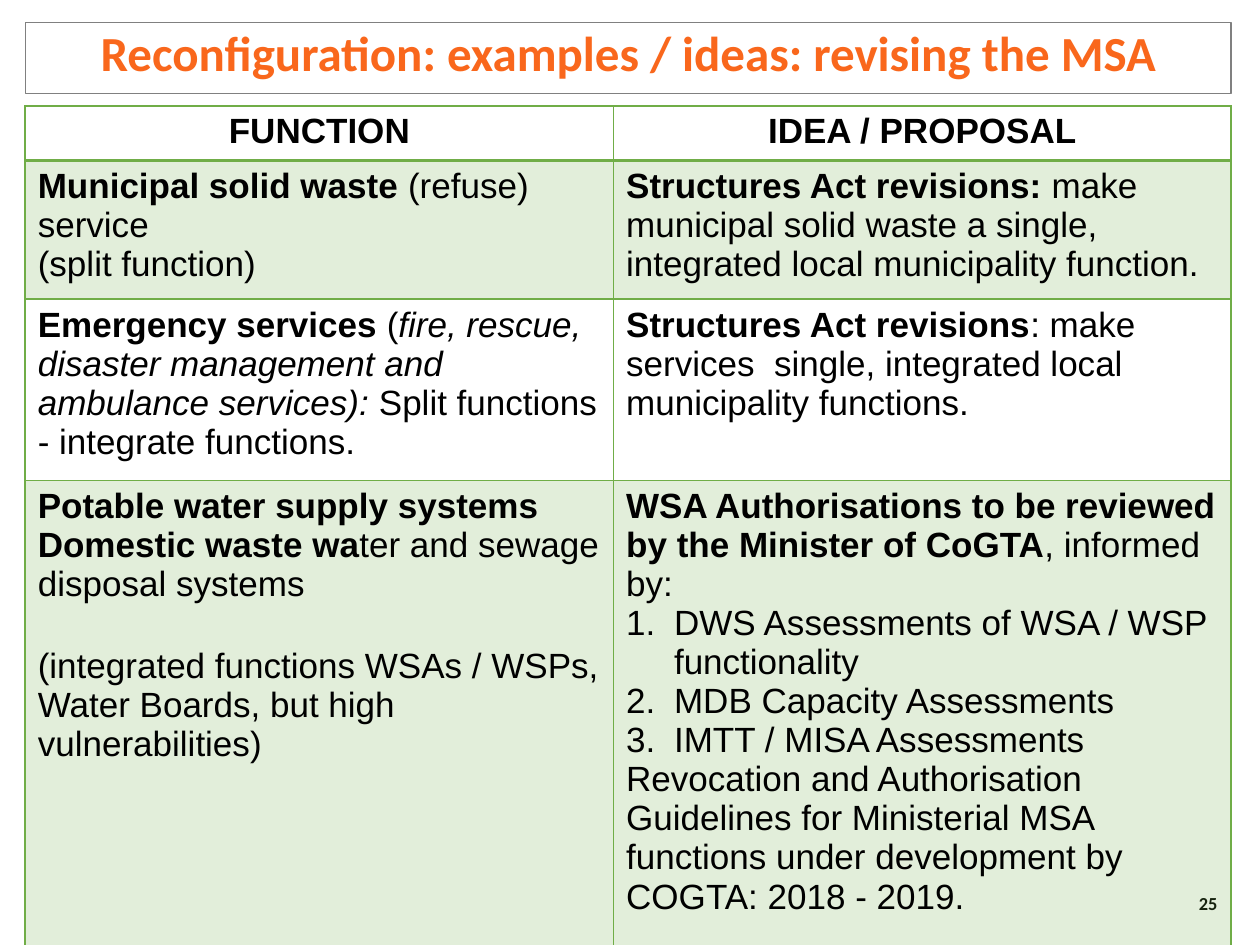
import dataclasses

import pptx
import pptx.dml.color
import pptx.enum.text
import pptx.oxml
import pptx.oxml.ns
import pptx.util

Inches = pptx.util.Inches
Pt = pptx.util.Pt
Align = pptx.enum.text.PP_ALIGN
Anchor = pptx.enum.text.MSO_ANCHOR


@dataclasses.dataclass(frozen=True)
class Theme:
    title_font: str = "Calibri"
    body_font: str = "Arial"
    title_size: float = 28
    body_size: float = 20
    number_size: float = 10.5
    accent: str = "F9671C"
    green: str = "70AD47"
    grey: str = "808080"
    ink: str = "000000"
    band_opacity: int = 20
    border: float = 1
    header_border: float = 2


THEME = Theme()
LEFT, WIDTH = 0.2, 9.57
TABLE_TOP = 0.84
COLUMNS = (4.67, 4.9)
ROWS = (0.43, 1.1, 1.44, 3.75)
NUMBER_INDENT = 0.38
BLOCK_GAP = 24.5


@dataclasses.dataclass(frozen=True)
class Para:
    """Spans are (text, style) pairs; style holds any of "b" and "i"."""
    spans: tuple
    numbered: bool = False
    space_before: float = 0
    align: Align = Align.LEFT


def heading(text):
    return [Para(((text, "b"),), align=Align.CENTER)]


def plain(text, **options):
    return Para(((text, ""),), **options)


TABLE = (
    (heading("FUNCTION"), heading("IDEA / PROPOSAL")),
    (
        [
            Para((("Municipal solid waste ", "b"), ("(refuse) service", ""))),
            plain("(split function)"),
        ],
        [Para((
            ("Structures Act revisions: ", "b"),
            ("make municipal solid waste a single, integrated local "
             "municipality function.", ""),
        ))],
    ),
    (
        [Para((
            ("Emergency services ", "b"),
            ("(", ""),
            ("fire, rescue, disaster management and ambulance services): ", "i"),
            ("Split functions - integrate functions.", ""),
        ))],
        [Para((
            ("Structures Act revisions", "b"),
            (": make services  single, integrated local municipality functions.", ""),
        ))],
    ),
    (
        [
            Para((("Potable water supply systems", "b"),)),
            Para((("Domestic waste wa", "b"), ("ter and sewage disposal systems", ""))),
            plain("(integrated functions WSAs / WSPs, Water Boards, but high "
                  "vulnerabilities)", space_before=BLOCK_GAP),
        ],
        [
            Para((
                ("WSA Authorisations to be reviewed by the Minister of CoGTA", "b"),
                (", informed by:", ""),
            )),
            plain("DWS Assessments of WSA / WSP functionality", numbered=True),
            plain("MDB Capacity Assessments", numbered=True),
            plain("IMTT / MISA Assessments", numbered=True),
            plain("Revocation and Authorisation Guidelines for Ministerial MSA "
                  "functions under development by COGTA: 2018 - 2019."),
        ],
    ),
)


def rgb(color):
    return pptx.dml.color.RGBColor.from_string(color)


def style_font(font, name, size, color, bold=False, italic=False):
    font.name, font.size = name, Pt(size)
    font.bold, font.italic = bold, italic
    font.color.rgb = rgb(color)


def number_paragraph(para):
    properties = para._p.get_or_add_pPr()
    properties.set("marL", str(Inches(NUMBER_INDENT)))
    properties.set("indent", str(-Inches(NUMBER_INDENT)))
    bullet = pptx.oxml.parse_xml(
        f'<a:buAutoNum {pptx.oxml.ns.nsdecls("a")} type="arabicPeriod"/>')
    properties.append(bullet)


def fill_cell_text(cell, paras):
    frame = cell.text_frame
    for index, content in enumerate(paras):
        para = frame.add_paragraph() if index else frame.paragraphs[0]
        para.alignment = content.align
        if content.space_before:
            para.space_before = Pt(content.space_before)
        if content.numbered:
            number_paragraph(para)
        for text, style in content.spans:
            span = para.add_run()
            span.text = text
            style_font(span.font, THEME.body_font, THEME.body_size, THEME.ink,
                       bold="b" in style, italic="i" in style)


def tint_cell(cell):
    cell.fill.solid()
    cell.fill.fore_color.rgb = rgb(THEME.green)
    color = cell._tc.tcPr.find(".//" + pptx.oxml.ns.qn("a:srgbClr"))
    color.append(pptx.oxml.parse_xml(
        f'<a:alpha {pptx.oxml.ns.nsdecls("a")} val="{THEME.band_opacity * 1000}"/>'))


def border_cell(cell, top, bottom):
    """Draw all four borders; they must come before the fill in the cell's XML."""
    widths = {"lnL": THEME.border, "lnR": THEME.border, "lnT": top, "lnB": bottom}
    for index, (side, width) in enumerate(widths.items()):
        line = pptx.oxml.parse_xml(
            f'<a:{side} {pptx.oxml.ns.nsdecls("a")} w="{Pt(width)}">'
            f'<a:solidFill><a:srgbClr val="{THEME.green}"/></a:solidFill></a:{side}>')
        cell._tc.get_or_add_tcPr().insert(index, line)


def add_title(slide, text):
    title = slide.shapes.title
    title.left, title.top = Inches(LEFT), Inches(0.18)
    title.width, title.height = Inches(WIDTH), Inches(0.56)
    title.line.color.rgb = rgb(THEME.grey)
    title.line.width = Pt(0.75)
    frame = title.text_frame
    frame.text = text
    frame.auto_size = pptx.enum.text.MSO_AUTO_SIZE.NONE
    frame.vertical_anchor = Anchor.TOP
    para = frame.paragraphs[0]
    para.alignment, para.line_spacing = Align.CENTER, 0.9
    style_font(para.runs[0].font, THEME.title_font, THEME.title_size,
               THEME.accent, bold=True)


def add_page_number(slide, number):
    box = slide.shapes.add_textbox(Inches(9.31), Inches(6.97), Inches(0.45), Inches(0.4))
    frame = box.text_frame
    frame.word_wrap = True
    frame.vertical_anchor = Anchor.MIDDLE
    frame.text = number
    para = frame.paragraphs[0]
    para.alignment = Align.RIGHT
    style_font(para.runs[0].font, THEME.title_font, THEME.number_size,
               THEME.ink, bold=True)


def add_proposal_table(slide):
    table = slide.shapes.add_table(
        len(ROWS), len(COLUMNS), Inches(LEFT), Inches(TABLE_TOP),
        Inches(WIDTH), Inches(sum(ROWS))).table
    table.first_row = table.horz_banding = False
    for column, width in zip(table.columns, COLUMNS):
        column.width = Inches(width)
    for index, (row, height, contents) in enumerate(zip(table.rows, ROWS, TABLE)):
        row.height = Inches(height)
        top = THEME.header_border if index == 1 else THEME.border
        bottom = THEME.header_border if index == 0 else THEME.border
        for cell, paras in zip(row.cells, contents):
            fill_cell_text(cell, paras)
            if index % 2:
                tint_cell(cell)
            else:
                cell.fill.background()
            border_cell(cell, top, bottom)


def main():
    deck = pptx.Presentation()
    deck.slide_width, deck.slide_height = Inches(10), Inches(7.5)
    slide = deck.slides.add_slide(deck.slide_layouts.get_by_name("Title Only"))
    add_page_number(slide, "25")
    add_proposal_table(slide)
    add_title(slide, "Reconfiguration: examples / ideas: revising the MSA")
    deck.save("out.pptx")


if __name__ == "__main__":
    main()
